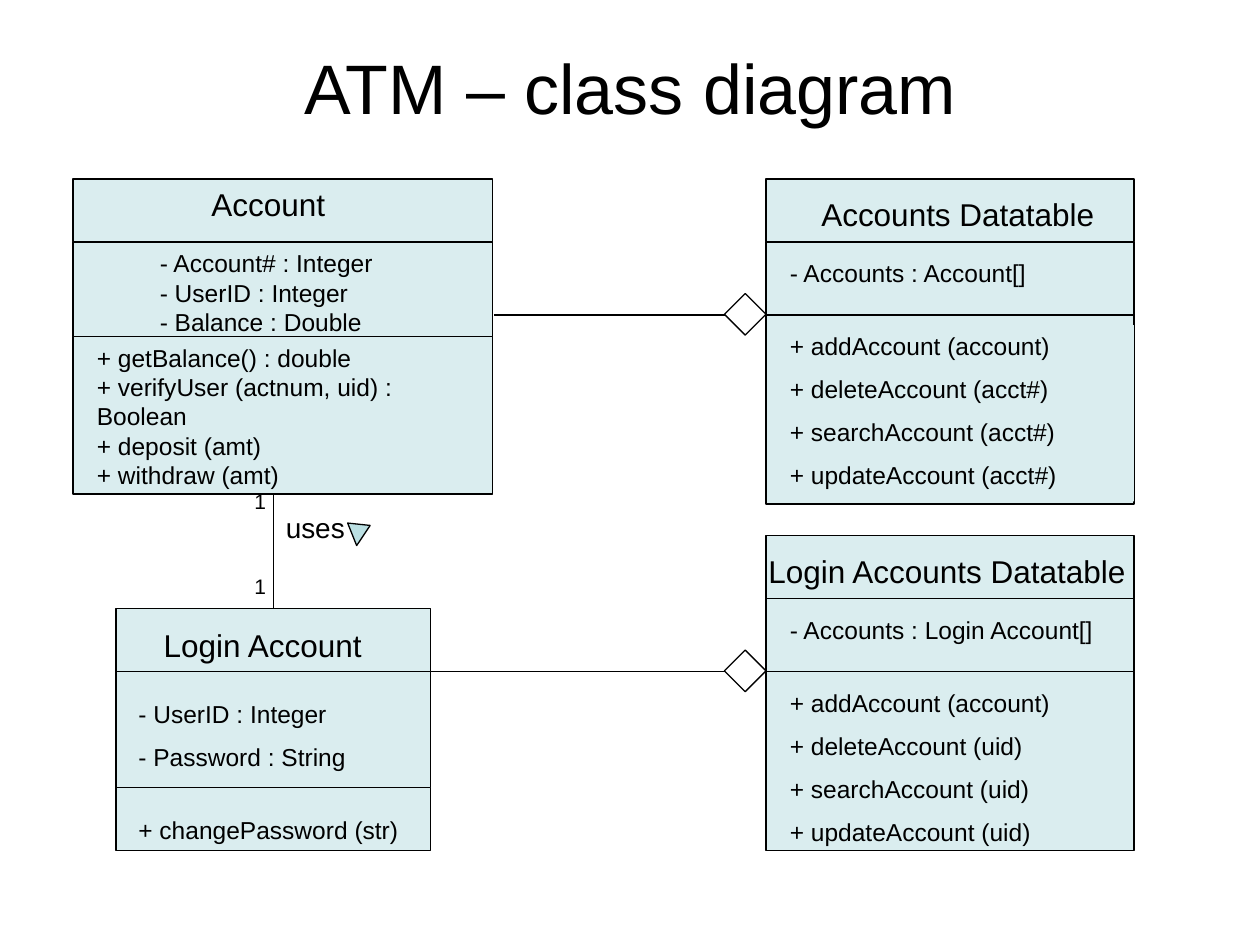
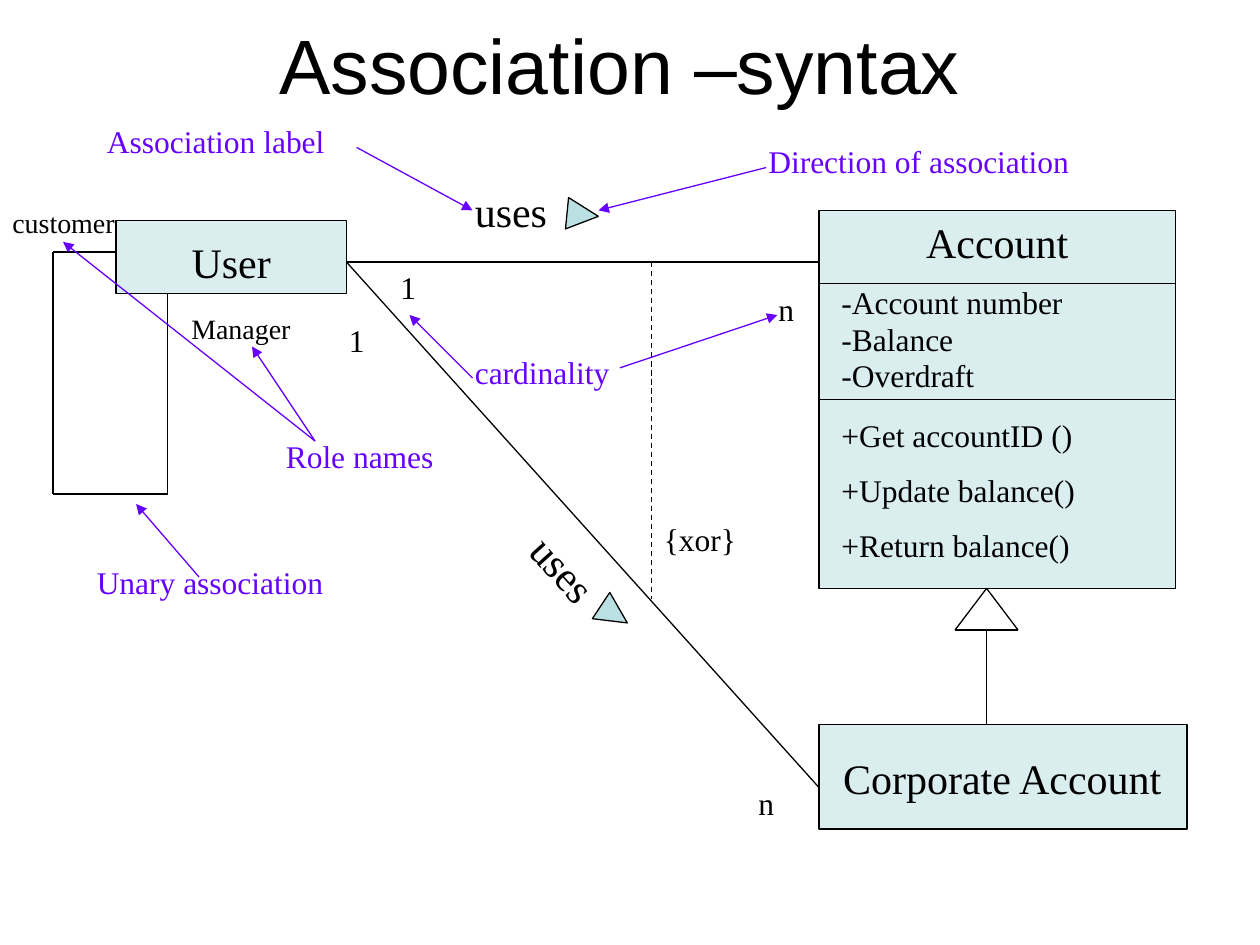
from dataclasses import dataclass
from itertools import pairwise

from lxml.etree import SubElement
from pptx import Presentation
from pptx.dml.color import RGBColor
from pptx.enum.dml import MSO_LINE
from pptx.enum.shapes import MSO_CONNECTOR, MSO_SHAPE
from pptx.enum.text import MSO_ANCHOR, MSO_AUTO_SIZE, PP_ALIGN
from pptx.oxml.ns import qn
from pptx.util import Inches, Pt


@dataclass(frozen=True)
class Theme:
    """Colours, fonts and sizes shared by the slides."""
    ink: RGBColor = RGBColor(0x00, 0x00, 0x00)
    note: RGBColor = RGBColor(0x66, 0x00, 0xFF)
    box: RGBColor = RGBColor(0xDA, 0xED, 0xEF)
    marker: RGBColor = RGBColor(0xBB, 0xE0, 0xE3)
    sans: str = "Arial"
    serif: str = "Times New Roman"
    tiny: int = 12
    member: int = 14
    role: int = 16
    label: int = 18
    name: int = 24
    line: float = 0.75
    gap: float = 0.55


T = Theme()


def write(tf, lines, size=T.label, font=T.sans, color=T.ink, align=PP_ALIGN.LEFT,
          gap=T.gap, spacing=None):
    """Fill a text frame with one formatted paragraph per line."""
    for i, line in enumerate(lines):
        p = tf.add_paragraph() if i else tf.paragraphs[0]
        p.alignment = align
        if i:
            p.space_before = Pt(size * gap)
        if spacing:
            p.line_spacing = spacing
        r = p.add_run()
        r.text = line
        r.font.name, r.font.size = font, Pt(size)
        r.font.color.rgb = color


def add_text(s, at, *lines, wrap=True, fill=None, rotation=0, **fmt):
    """Add a text box at (left, top, width, height)."""
    sp = s.shapes.add_textbox(*map(Inches, at))
    sp.rotation = rotation
    sp.text_frame.word_wrap = wrap
    if fill is not None:
        sp.fill.solid()
        sp.fill.fore_color.rgb = fill
    write(sp.text_frame, lines, **fmt)


def add_outline(s, at, kind=MSO_SHAPE.RECTANGLE, fill=T.box, rotation=0):
    """Add a thin-lined preset shape, hollow if fill is None."""
    sp = s.shapes.add_shape(kind, *map(Inches, at))
    sp.shadow.inherit = False
    sp.rotation = rotation
    if fill is None:
        sp.fill.background()
    else:
        sp.fill.solid()
        sp.fill.fore_color.rgb = fill
    sp.line.color.rgb = T.ink
    sp.line.width = Pt(T.line)


def add_compartments(s, left, width, *edges):
    """Stack class compartments between successive vertical edges."""
    for top, bottom in pairwise(edges):
        add_outline(s, (left, top, width, bottom - top))


def add_direction(s, at, rotation):
    """Add the triangle that gives an association's direction."""
    add_outline(s, at, MSO_SHAPE.ISOSCELES_TRIANGLE, T.marker, rotation)


def add_path(s, *points, color=T.ink, arrow=False, dashed=False):
    """Join successive points with straight connectors."""
    for start, end in pairwise(points):
        c = s.shapes.add_connector(MSO_CONNECTOR.STRAIGHT,
                                   *map(Inches, (*start, *end)))
        c.line.color.rgb = color
        c.line.width = Pt(T.line)
        if dashed:
            c.line.dash_style = MSO_LINE.DASH
        if arrow:
            SubElement(c.line._get_or_add_ln(), qn("a:tailEnd"), type="triangle")
        SubElement(c._element.spPr, qn("a:effectLst"))


def add_slide(prs, title, at, size):
    """Add a title-only slide with its title placed."""
    s = prs.slides.add_slide(prs.slide_layouts[5])
    sp = s.shapes.title
    sp.left, sp.top, sp.width, sp.height = map(Inches, at)
    tf = sp.text_frame
    tf.auto_size = MSO_AUTO_SIZE.NONE
    tf.vertical_anchor = MSO_ANCHOR.MIDDLE
    write(tf, [title], size=size, align=PP_ALIGN.CENTER)
    return s


def add_datatable(s, top, name, name_at, holds, key, fill=None):
    """Add a datatable class with its four operations."""
    add_text(s, name_at, name, wrap=False)
    add_text(s, (6.17, top + 0.58, 2.75, 0.33), f"- Accounts : {holds}[]", size=T.member)
    add_text(s, (6.17, top + 1.16, 2.83, 1.4), "+ addAccount (account)",
             *(f"+ {verb}Account ({key})" for verb in ("delete", "search", "update")),
             size=T.member, fill=fill)


def build_class_diagram(prs):
    """Build the ATM class diagram."""
    s = add_slide(prs, "ATM – class diagram", (0.5, 0.3, 9, 0.78), 40)
    add_compartments(s, 0.58, 3.33, 1.42, 1.92, 2.67, 3.92)
    add_compartments(s, 6.08, 2.92, 1.42, 1.92, 2.5, 4)
    add_compartments(s, 6.08, 2.92, 4.25, 4.75, 5.33, 6.75)
    add_compartments(s, 0.92, 2.5, 4.83, 5.33, 6.25, 6.75)

    add_text(s, (1.58, 1.42, 1.1, 0.4), "Account", wrap=False)
    add_text(s, (1.17, 1.92, 1.9, 0.81), "- Account# : Integer", "- UserID : Integer",
             "- Balance : Double", wrap=False, size=T.member, gap=0)
    add_text(s, (0.67, 2.67, 3.25, 1.28), "+ getBalance() : double",
             "+ verifyUser (actnum, uid) : Boolean", "+ deposit (amt)",
             "+ withdraw (amt)", size=T.member, gap=0)
    add_datatable(s, 1.42, "Accounts Datatable", (6.42, 1.5, 2.4, 0.4),
                  "Account", "acct#", fill=T.box)
    add_datatable(s, 4.25, "Login Accounts Datatable", (6, 4.33, 3.06, 0.4),
                  "Login Account", "uid")
    add_text(s, (0.92, 4.92, 2.33, 0.4), "Login Account", align=PP_ALIGN.CENTER)
    add_text(s, (1, 5.5, 2.33, 0.68), "- UserID : Integer", "- Password : String",
             size=T.member)
    add_text(s, (1, 6.42, 2.33, 0.33), "+ changePassword (str)", size=T.member)

    for part_edge, y in ((3.92, 2.5), (3.42, 5.33)):
        add_outline(s, (5.75, y - 0.17, 0.33, 0.33), MSO_SHAPE.DIAMOND, None)
        add_path(s, (5.75, y), (part_edge, y))
    add_path(s, (2.17, 4.83), (2.17, 3.92))
    add_text(s, (2.17, 4, 1.17, 0.37), "uses", size=T.role)
    for y in (3.83, 4.5):
        add_text(s, (1.92, y, 0.33, 0.3), "1", size=T.tiny)
    add_direction(s, (2.75, 4.16, 0.18, 0.17), 186)


def build_association(prs):
    """Build the annotated association syntax."""
    s = add_slide(prs, "Association –syntax", (0.67, 0.17, 8.5, 0.67), 44)
    add_outline(s, (0.92, 1.75, 1.83, 0.58))
    add_outline(s, (6.5, 1.67, 2.83, 3))
    add_outline(s, (6.5, 5.75, 2.92, 0.83))
    for y in (2.25, 3.17):
        add_path(s, (6.5, y), (9.33, y))

    for at, name in (((1, 1.83, 1.67, 0.51), "User"),
                     ((6.58, 1.67, 2.67, 0.5), "Account"),
                     ((6.58, 5.92, 2.75, 0.5), "Corporate Account")):
        add_text(s, at, name, size=T.name, font=T.serif, align=PP_ALIGN.CENTER)
    add_text(s, (6.58, 2.33, 2.67, 0.88), "-Account number", "-Balance", "-Overdraft",
             font=T.serif, spacing=0.5)
    add_text(s, (6.58, 3.25, 2.67, 1.3), "+Get accountID ()", "+Update balance()",
             "+Return balance()", font=T.serif)

    add_path(s, (2.75, 2.08), (6.5, 2.08))
    add_path(s, (2.75, 2.08), (6.5, 6.25))
    add_path(s, (5.17, 2.08), (5.17, 4.75), dashed=True)
    add_path(s, (0.92, 2), (0.42, 2), (0.42, 3.92), (1.33, 3.92), (1.33, 2.33))
    add_path(s, (7.83, 4.67), (7.58, 5), (8.08, 5), (7.83, 4.67))
    add_path(s, (7.83, 5), (7.83, 5.75))

    add_text(s, (3.67, 1.42, 1, 0.5), "uses", size=T.name, font=T.serif)
    add_direction(s, (4.5, 1.58, 0.25, 0.25), 95.6)
    add_text(s, (4.04, 4.38, 1.08, 0.5), "uses", size=T.name, font=T.serif, rotation=48)
    add_direction(s, (4.75, 4.75, 0.25, 0.25), 123.5)

    for x, y, width, mark in ((3.08, 2.08, 0.42, "1"), (2.67, 2.5, 0.42, "1"),
                              (6.08, 2.25, 0.42, "n"), (5.92, 6.17, 0.5, "n"),
                              (5.17, 4.08, 1, "{xor}")):
        add_text(s, (x, y, width, 0.4), mark, font=T.serif)
    for x, y, width, role in ((1.42, 2.42, 1, "Manager"), (0, 1.58, 1.17, "customer")):
        add_text(s, (x, y, width, 0.37), role, size=T.role, font=T.serif)

    for x, y, width, note, *arrows in (
            (0.75, 0.92, 2.42, "Association label", ((2.83, 1.17), (3.75, 1.67))),
            (6, 1.08, 3.5, "Direction of association", ((6.08, 1.33), (4.75, 1.67))),
            (3.67, 2.75, 1.58, "cardinality", ((4.92, 2.92), (6.17, 2.5)),
             ((3.75, 3), (3.25, 2.5))),
            (0.67, 4.42, 2.5, "Unary association", ((1.58, 4.58), (1.08, 4))),
            (2.17, 3.42, 1.67, "Role names", ((2.5, 3.5), (2, 2.75)),
             ((2.5, 3.5), (0.5, 1.92)))):
        add_text(s, (x, y, width, 0.4), note, font=T.serif, color=T.note)
        for ends in arrows:
            add_path(s, *ends, color=T.note, arrow=True)


def main():
    """Build both slides and save them."""
    prs = Presentation()
    prs.slide_width, prs.slide_height = Inches(10), Inches(7.5)
    build_class_diagram(prs)
    build_association(prs)
    prs.save("out.pptx")


if __name__ == "__main__":
    main()
